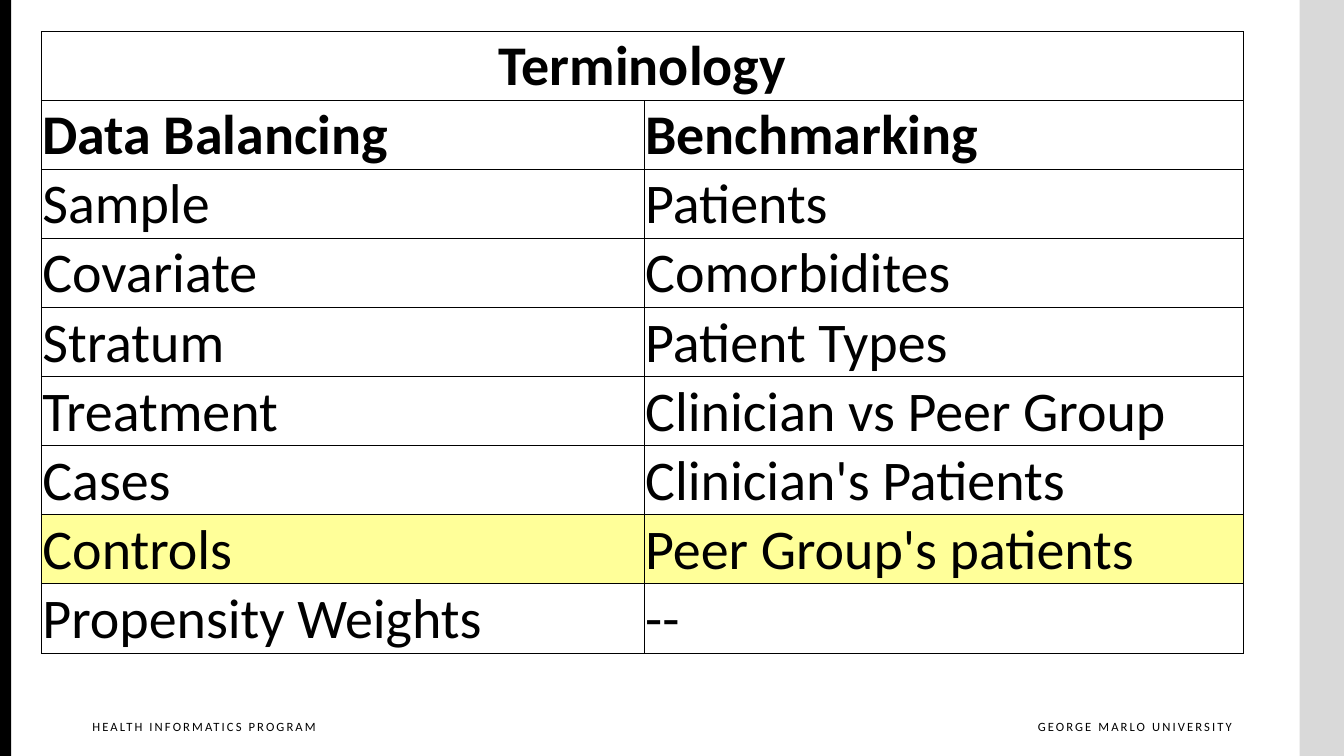
import dataclasses
import typing

import lxml.etree
import pptx
import pptx.dml.color
import pptx.enum.shapes
import pptx.enum.text
import pptx.oxml.ns
import pptx.util

Cm = pptx.util.Cm
Pt = pptx.util.Pt
Align = pptx.enum.text.PP_ALIGN
Anchor = pptx.enum.text.MSO_ANCHOR


@dataclasses.dataclass(frozen=True)
class Theme:
    font: str = "Calibri"
    ink: str = "000000"
    edge: str = "D9D9D9"
    mark: str = "FFFF99"
    large: float = 40
    small: float = 9
    rule: float = 0.5
    track: float = 1.5


@dataclasses.dataclass(frozen=True)
class Bar:
    left: float
    width: float
    fill: str


@dataclasses.dataclass(frozen=True)
class Label:
    text: str
    left: float
    width: float
    align: Align


@dataclasses.dataclass(frozen=True)
class Term:
    left: str
    right: str
    bold: bool = False
    marked: bool = False


THEME = Theme()
WIDTH, HEIGHT = 33.87, 19.05

BARS = (
    Bar(32.75, 1.12, THEME.edge),
    Bar(0, 0.28, THEME.ink),
)
LABELS = (
    Label("GEORGE MARLO UNIVERSITY", 25.07, 5.97, Align.RIGHT),
    Label("HEALTH INFORMATICS PROGRAM", 2.08, 6.45, Align.LEFT),
)
TERMS = (
    Term("Data Balancing", "Benchmarking", bold=True),
    Term("Sample", "Patients"),
    Term("Covariate", "Comorbidites"),
    Term("Stratum", "Patient Types"),
    Term("Treatment", "Clinician vs Peer Group"),
    Term("Cases", "Clinician's Patients"),
    Term("Controls", "Peer Group's patients", marked=True),
    Term("Propensity Weights", "--"),
)
SPANS = (15.19, 15.11)
ROW = 1.74


def tint(code: str) -> pptx.dml.color.RGBColor:
    return pptx.dml.color.RGBColor.from_string(code)


def write(frame: typing.Any, text: str, size: float, align: Align, bold: bool = False) -> typing.Any:
    para = frame.paragraphs[0]
    para.alignment = align
    run = para.add_run()
    run.text = text
    font = run.font
    font.name, font.size, font.bold = THEME.font, Pt(size), bold
    font.color.rgb = tint(THEME.ink)
    return run


def draw_bar(slide: typing.Any, bar: Bar) -> None:
    shape = slide.shapes.add_shape(
        pptx.enum.shapes.MSO_SHAPE.RECTANGLE, Cm(bar.left), 0, Cm(bar.width), Cm(HEIGHT))
    shape.shadow.inherit = False
    shape.fill.solid()
    shape.fill.fore_color.rgb = tint(bar.fill)
    shape.line.fill.background()


def draw_label(slide: typing.Any, label: Label) -> None:
    box = slide.shapes.add_textbox(Cm(label.left), Cm(17.98), Cm(label.width), Cm(0.84))
    frame = box.text_frame
    frame.word_wrap = True
    frame.margin_right = 0
    run = write(frame, label.text, THEME.small, label.align)
    run.font._element.set("spc", str(int(THEME.track * 100)))


def add_rules(cell: typing.Any) -> None:
    name = pptx.oxml.ns.qn
    props = cell._tc.get_or_add_tcPr()
    for side in ("lnL", "lnR", "lnT", "lnB"):
        line = lxml.etree.SubElement(props, name(f"a:{side}"), w=str(Pt(THEME.rule)))
        fill = lxml.etree.SubElement(line, name("a:solidFill"))
        lxml.etree.SubElement(fill, name("a:srgbClr"), val=THEME.ink)


def style_cell(cell: typing.Any, marked: bool) -> None:
    add_rules(cell)
    cell.vertical_anchor = Anchor.MIDDLE
    cell.margin_left = cell.margin_right = cell.margin_top = Cm(0.03)
    cell.margin_bottom = 0
    if marked:
        cell.fill.solid()
        cell.fill.fore_color.rgb = tint(THEME.mark)
    else:
        cell.fill.background()


def draw_table(slide: typing.Any, title: str, terms: typing.Sequence[Term]) -> None:
    count = len(terms) + 1
    table = slide.shapes.add_table(
        count, len(SPANS), Cm(1.04), Cm(0.79), Cm(sum(SPANS)), Cm(ROW * count)).table
    table.first_row = table.horz_banding = False
    for col, span in zip(table.columns, SPANS):
        col.width = Cm(span)
    for row in table.rows:
        row.height = Cm(ROW)

    head = table.cell(0, 0)
    head.merge(table.cell(0, 1))
    for cell in table.rows[0].cells:
        style_cell(cell, False)
    write(head.text_frame, title, THEME.large, Align.CENTER, True)

    for row, term in enumerate(terms, 1):
        for col, text in enumerate((term.left, term.right)):
            cell = table.cell(row, col)
            style_cell(cell, term.marked)
            write(cell.text_frame, text, THEME.large, Align.LEFT, term.bold)


def main() -> None:
    deck = pptx.Presentation()
    deck.slide_width, deck.slide_height = Cm(WIDTH), Cm(HEIGHT)
    slide = deck.slides.add_slide(deck.slide_layouts[6])
    for bar in BARS:
        draw_bar(slide, bar)
    for label in LABELS:
        draw_label(slide, label)
    draw_table(slide, "Terminology", TERMS)
    deck.save("out.pptx")


if __name__ == "__main__":
    main()
